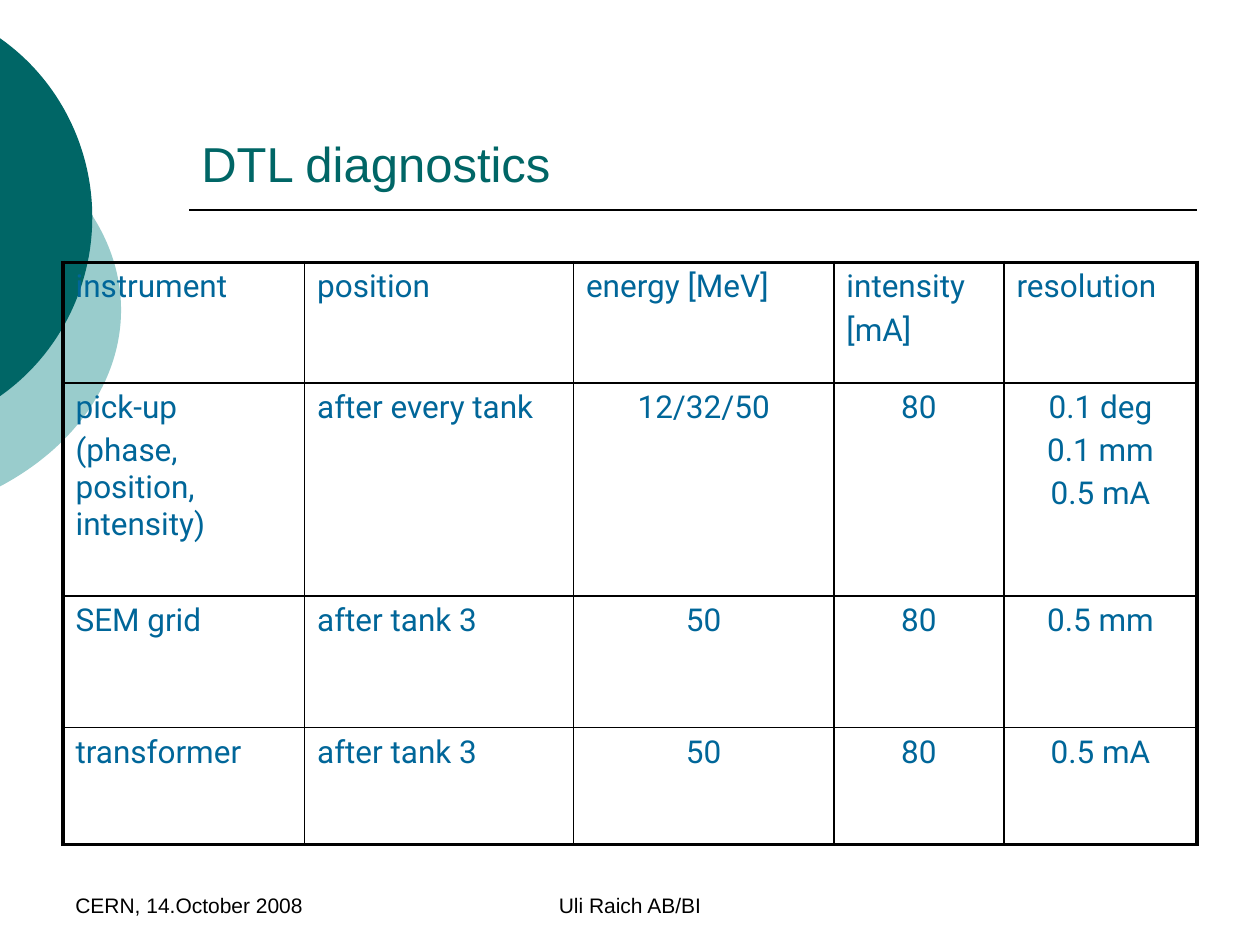
import math
import pptx
import pptx.util
import pptx.dml.color
import pptx.enum.shapes
import pptx.enum.text
import pptx.oxml
import pptx.oxml.ns

Cm, Pt = pptx.util.Cm, pptx.util.Pt
ALIGN = pptx.enum.text.PP_ALIGN
NS = pptx.oxml.ns.nsdecls("a")
INK, TEAL, PALE, BLUE = "000000", "006666", "99CCCC", "006699"

COLS = [4.87, 5.42, 5.25, 3.43, 3.89]
ROWS = [2.43, 4.29, 2.66, 2.35]
DATA = [
    ["instrument", "position", "energy [MeV]", "intensity\n[mA]", "resolution"],
    ["pick-up\n(phase, position, intensity)", "after every tank", "12/32/50", "80",
     "0.1 deg\n0.1 mm\n0.5 mA"],
    ["SEM grid", "after tank 3", "50", "80", "0.5 mm"],
    ["transformer", "after tank 3", "50", "80", "0.5 mA"],
]


def color(code):
    return pptx.dml.color.RGBColor.from_string(code)


def style(para, font, size, code, align=ALIGN.LEFT):
    para.alignment = align
    for run in para.runs:
        run.font.name = font
        run.font.size = Pt(size)
        run.font.color.rgb = color(code)


def add_text(slide, box, text, size, code, align=ALIGN.LEFT):
    shape = slide.shapes.add_textbox(*map(Cm, box))
    frame = shape.text_frame
    frame.word_wrap = True
    frame.vertical_anchor = pptx.enum.text.MSO_ANCHOR.BOTTOM
    frame.text = text
    style(frame.paragraphs[0], "Arial", size, code, align)


def add_disc(slide, box, code):
    """Draw an ellipse cut along the slide's left edge, as two Bezier arcs."""
    left, top, width, height = box
    a, b = width / 2, height / 2
    limit = math.acos((-0.03 - left - a) / a)
    pull = 4 / 3 * math.tan(limit / 4)

    def spot(t, k=0):
        x = a * (1 + math.cos(t) - k * math.sin(t))
        y = b * (1 + math.sin(t) + k * math.cos(t))
        return Cm(x), Cm(y)

    points = [spot(-limit), spot(0), spot(limit)]
    path = slide.shapes.build_freeform(*points[0])
    path.add_line_segments(points[1:], close=True)
    shape = path.convert_to_shape()
    shape.left, shape.top, shape.width, shape.height = map(Cm, box)

    # Turn the two straight sides into curves
    outline = shape._element.spPr.find(".//" + pptx.oxml.ns.qn("a:path"))
    outline.set("w", str(Cm(width)))
    outline.set("h", str(Cm(height)))
    for part in list(outline):
        outline.remove(part)

    def add_step(tag, *spots):
        marks = "".join(f'<a:pt x="{x}" y="{y}"/>' for x, y in spots)
        outline.append(pptx.oxml.parse_xml(f"<a:{tag} {NS}>{marks}</a:{tag}>"))

    add_step("moveTo", points[0])
    for start, end in ((-limit, 0), (0, limit)):
        add_step("cubicBezTo", spot(start, pull), spot(end, -pull), spot(end))
    add_step("close")

    shape.shadow.inherit = False
    shape.fill.solid()
    shape.fill.fore_color.rgb = color(code)
    shape.line.fill.background()


def add_title(slide, box):
    left, top, width, height = box
    add_text(slide, box, "DTL diagnostics", 28, TEAL)
    # Rule just below the title
    y = Cm(top + height + 0.23)
    line = slide.shapes.add_connector(pptx.enum.shapes.MSO_CONNECTOR.STRAIGHT,
                                      Cm(left), y, Cm(left + width), y)
    line.line.color.rgb = color(INK)
    line.line.width = Pt(1)
    props = line._element.spPr
    props.append(props.makeelement(pptx.oxml.ns.qn("a:effectLst"), {}))


def set_edges(cell, thick):
    props = cell._tc.get_or_add_tcPr()
    for i, side in enumerate("LRTB"):
        width = Pt(2.25 if side in thick else 1)
        props.insert(i, pptx.oxml.parse_xml(
            f'<a:ln{side} {NS} w="{width}"><a:solidFill>'
            f'<a:srgbClr val="{INK}"/></a:solidFill></a:ln{side}>'))


def add_grid(slide, box):
    last_row, last_col = len(ROWS) - 1, len(COLS) - 1
    table = slide.shapes.add_table(len(ROWS), len(COLS), *map(Cm, box)).table
    table.first_row = table.horz_banding = False
    for col, width in zip(table.columns, COLS):
        col.width = Cm(width)
    for r, texts in enumerate(DATA):
        table.rows[r].height = Cm(ROWS[r])
        for c, text in enumerate(texts):
            cell = table.cell(r, c)
            cell.fill.background()
            cell.text_frame.text = text
            # Values are centred, headings and names are not
            align = ALIGN.CENTER if r > 0 and c > 1 else ALIGN.LEFT
            for para in cell.text_frame.paragraphs:
                style(para, "Roboto", 18, BLUE, align)
                para.space_before = Pt(3.6)
            # Thick frame around the whole table
            outer = {"L": c == 0, "R": c == last_col, "T": r == 0, "B": r == last_row}
            set_edges(cell, [side for side in outer if outer[side]])


def add_footer(slide, box):
    left, top, width, height = box
    add_text(slide, (left, top, 5.93, height), "CERN, 14.October 2008", 12, INK)
    add_text(slide, (left + 7.41, top, 8.04, height), "Uli Raich AB/BI", 12, INK,
             ALIGN.CENTER)


def main():
    deck = pptx.Presentation()
    deck.slide_width, deck.slide_height = Cm(25.4), Cm(19.05)
    slide = deck.slides.add_slide(deck.slide_layouts[6])
    # Corner discs
    add_disc(slide, (-8.99, 1.91, 11.43, 8.68), PALE)
    add_disc(slide, (-6.73, 0, 8.59, 8.76), TEAL)
    # Footer, title and table
    add_footer(slide, (1.27, 17.35, 22.86, 1.27))
    add_title(slide, (3.81, 0.84, 20.32, 3.17))
    add_grid(slide, (1.27, 5.29, sum(COLS), sum(ROWS)))
    deck.save("out.pptx")


if __name__ == "__main__":
    main()
